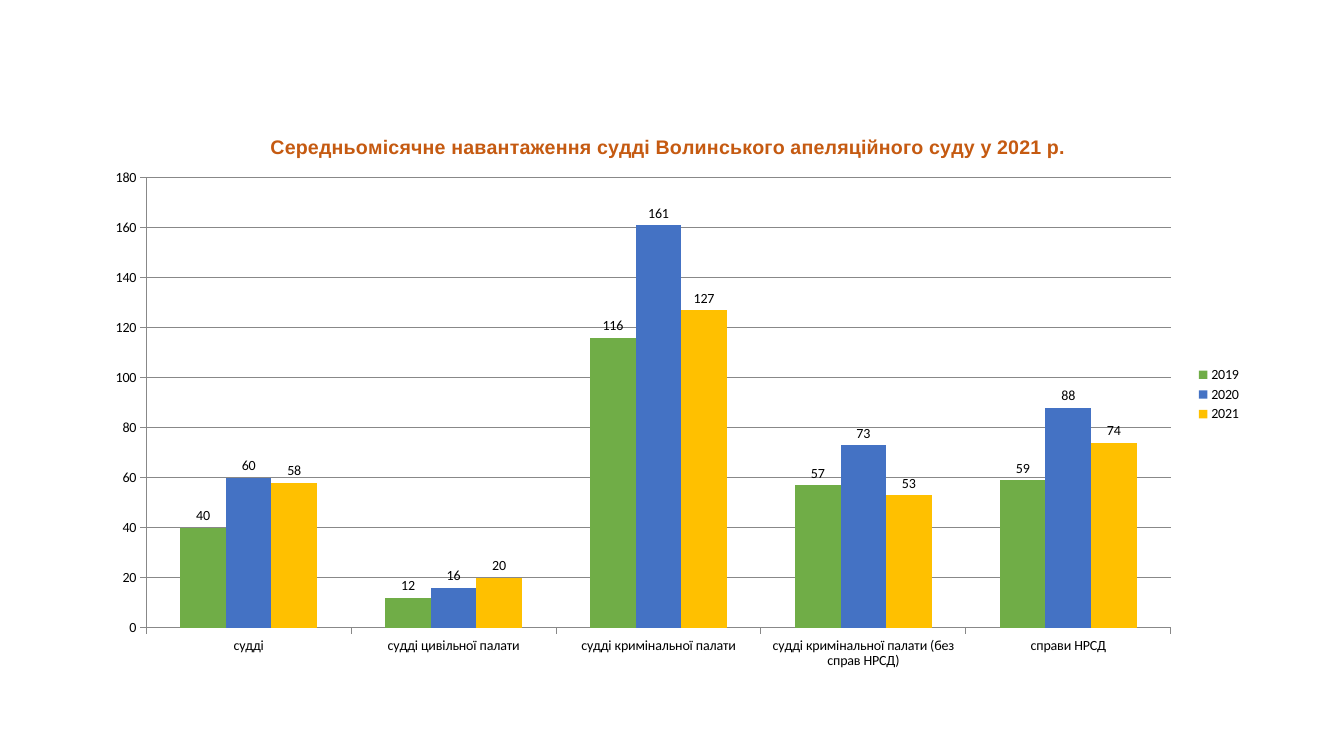
from lxml.etree import SubElement
from pptx import Presentation
from pptx.chart.data import CategoryChartData
from pptx.dml.color import RGBColor
from pptx.enum.chart import XL_CHART_TYPE as ChartType
from pptx.enum.chart import XL_LABEL_POSITION as LabelPos
from pptx.enum.chart import XL_LEGEND_POSITION as LegendPos
from pptx.enum.chart import XL_TICK_MARK as Tick
from pptx.oxml.ns import qn
from pptx.util import Pt

PX = 12192000 / 1344
BLACK = RGBColor(0x00, 0x00, 0x00)
GRAY = RGBColor(0x88, 0x88, 0x88)
RUST = RGBColor(0xC5, 0x5A, 0x11)
GREEN = RGBColor(0x70, 0xAD, 0x47)
BLUE = RGBColor(0x44, 0x72, 0xC4)
AMBER = RGBColor(0xFF, 0xC0, 0x00)


def px(length):
    return round(length * PX)


def write(frame, text, *, font, size, color, bold=False):
    run = frame.paragraphs[0].add_run()
    run.text = text
    run.font.name = font
    run.font.size = Pt(size)
    run.font.bold = bold
    run.font.color.rgb = color


def place(part, index, **settings):
    for old in part.findall(qn("c:layout")):
        part.remove(old)
    layout = SubElement(part, qn("c:layout"))
    part.insert(index, layout)
    manual = SubElement(layout, qn("c:manualLayout"))
    for tag, value in settings.items():
        SubElement(manual, qn(f"c:{tag}")).set("val", str(value))


prs = Presentation()
prs.slide_width, prs.slide_height = px(1344), px(756)
slide = prs.slides.add_slide(prs.slide_layouts[6])

workload = CategoryChartData()
workload.categories = [
    "судді",
    "судді цивільної палати",
    "судді кримінальної палати",
    "судді кримінальної палати (без справ НРСД)",
    "справи НРСД",
]
years = [
    ("2019", GREEN, (40, 12, 116, 57, 59)),
    ("2020", BLUE, (60, 16, 161, 73, 88)),
    ("2021", AMBER, (58, 20, 127, 53, 74)),
]
for year, _, cases in years:
    workload.add_series(year, cases)

chart = slide.shapes.add_chart(
    ChartType.COLUMN_CLUSTERED, px(93), px(108), px(1159), px(573), workload
).chart
chart.font.name = "Calibri"
chart.font.size = Pt(10)
chart.font.color.rgb = BLACK

write(
    chart.chart_title.text_frame,
    "Середньомісячне навантаження судді Волинського апеляційного суду у 2021 р.",
    font="Arial", size=14, color=RUST, bold=True,
)
chart.chart_title.include_in_layout = False
place(chart.element.find(".//" + qn("c:title")), 1,
      xMode="edge", yMode="edge", x=0.15, y=0.04)
place(chart.element.find(".//" + qn("c:plotArea")), 0,
      layoutTarget="inner", xMode="edge", yMode="edge",
      x=0.046, y=0.122, w=0.884, h=0.785)

chart.has_legend = True
chart.legend.position = LegendPos.RIGHT
chart.legend.include_in_layout = False

judges, load = chart.category_axis, chart.value_axis
load.minimum_scale, load.maximum_scale, load.major_unit = 0, 180, 20
load.has_major_gridlines = True
for axis in (judges, load):
    axis.major_tick_mark = Tick.OUTSIDE
    axis.minor_tick_mark = Tick.NONE
for line in (judges.format.line, load.format.line, load.major_gridlines.format.line):
    line.color.rgb = GRAY
    line.width = Pt(0.75)

columns = chart.plots[0]
columns.gap_width = 150
columns.overlap = 0
columns.vary_by_categories = False
for series, (_, color, _) in zip(columns.series, years):
    series.format.fill.solid()
    series.format.fill.fore_color.rgb = color
    series.invert_if_negative = False
    labels = series.data_labels
    labels.show_value = True
    labels.position = LabelPos.OUTSIDE_END
    labels.font.name = "Calibri"
    labels.font.size = Pt(10)
    labels.font.color.rgb = BLACK

prs.save("out.pptx")
